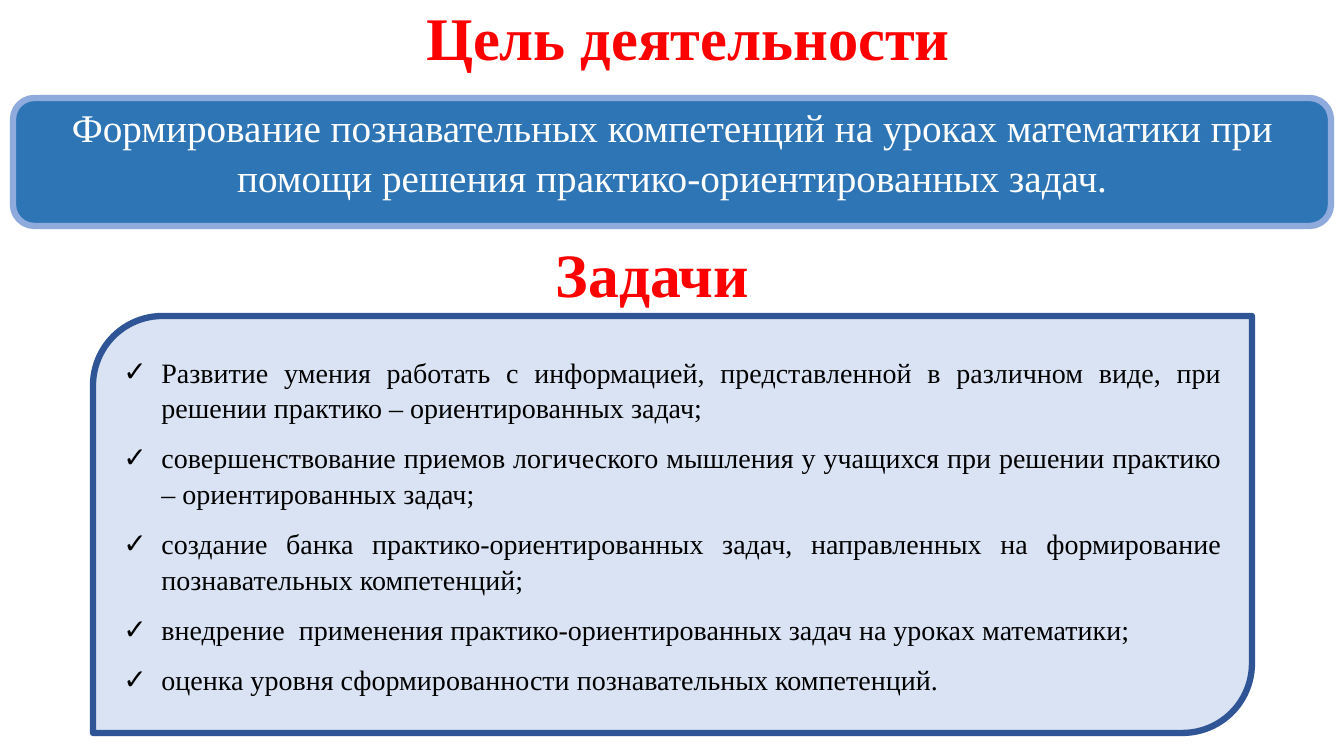
from lxml.etree import SubElement
from pptx import Presentation
from pptx.dml.color import RGBColor
from pptx.enum.shapes import MSO_SHAPE
from pptx.enum.text import MSO_ANCHOR, MSO_AUTO_SIZE, PP_ALIGN
from pptx.oxml.ns import qn
from pptx.util import Emu, Pt

PX = 9144000 / 1008  # 100.8 px to the inch

RED = RGBColor(0xFF, 0x00, 0x00)
WHITE = RGBColor(0xFF, 0xFF, 0xFF)
BLACK = RGBColor(0x00, 0x00, 0x00)
BLUE = RGBColor(0x2E, 0x75, 0xB6)
LIGHT_BLUE = RGBColor(0x8F, 0xAA, 0xDC)
PALE_BLUE = RGBColor(0xDA, 0xE3, 0xF3)
DARK_BLUE = RGBColor(0x2F, 0x55, 0x97)

FONT = "Times New Roman"
GOAL = ("Формирование познавательных компетенций на уроках математики "
        "при помощи решения практико-ориентированных задач.")
TASKS = [
    "Развитие умения работать с информацией, представленной в различном виде, "
    "при решении практико – ориентированных задач;",
    "совершенствование приемов логического мышления у учащихся при решении "
    "практико – ориентированных задач;",
    "создание банка практико-ориентированных задач, направленных на "
    "формирование познавательных компетенций;",
    "внедрение  применения практико-ориентированных задач на уроках математики;",
    "оценка уровня сформированности познавательных компетенций.",
]


def px(n):
    return Emu(round(n * PX))


def set_all(obj, values):
    for name, value in values.items():
        setattr(obj, name, value)


def place(s, left, top, width, height):
    set_all(s, {"left": px(left), "top": px(top),
                "width": px(width), "height": px(height)})


def paint(s, fill, line):
    s.fill.solid()
    s.fill.fore_color.rgb = fill
    s.line.color.rgb = line
    s.line.width = Pt(4.5)


def write(s, texts, font, color, paragraph, frame):
    """Fill the shape with one formatted paragraph for each text."""
    tf = s.text_frame
    set_all(tf, {"word_wrap": True, "auto_size": MSO_AUTO_SIZE.NONE, **frame})
    for i, text in enumerate(texts):
        p = tf.add_paragraph() if i else tf.paragraphs[0]
        set_all(p, paragraph)
        r = p.add_run()
        r.text = text
        set_all(r.font, {"name": FONT, **font})
        r.font.color.rgb = color


def add_check(p, indent):
    """Give the paragraph a tick bullet on a hanging indent."""
    pPr = p._p.get_or_add_pPr()
    pPr.set("marL", str(px(indent)))
    pPr.set("indent", str(-px(indent)))
    SubElement(pPr, qn("a:buChar")).set("char", "✓")


def set_geometry(s, preset):
    """Give a placeholder the outline of a preset shape."""
    geom = SubElement(s._element.spPr, qn("a:prstGeom"))
    geom.set("prst", preset)
    SubElement(geom, qn("a:avLst"))


def add_title(slide):
    s = slide.shapes.title
    place(s, 416, 0, 1159, 146)
    write(s, ["Цель деятельности"], {"size": Pt(43.2), "bold": True}, RED,
          {"alignment": PP_ALIGN.LEFT, "line_spacing": 0.9},
          {"vertical_anchor": MSO_ANCHOR.TOP, "margin_top": px(8)})


def add_goal(slide):
    s = slide.shapes.add_shape(MSO_SHAPE.ROUNDED_RECTANGLE,
                               px(13), px(98), px(1318), px(128))
    s.shadow.inherit = False
    paint(s, BLUE, LIGHT_BLUE)
    write(s, [GOAL], {"size": Pt(28)}, WHITE,
          {"alignment": PP_ALIGN.CENTER, "line_spacing": 1.07},
          {"vertical_anchor": MSO_ANCHOR.MIDDLE,
           "margin_top": px(0), "margin_bottom": px(24)})


def add_tasks_heading(slide):
    s = slide.shapes.add_textbox(px(541), px(226), px(223), px(90))
    write(s, ["Задачи"], {"size": Pt(44), "bold": True}, RED,
          {"alignment": PP_ALIGN.CENTER, "line_spacing": 1.07,
           "space_after": Pt(8)}, {})


def add_tasks(slide):
    s = slide.placeholders[1]
    place(s, 93, 316, 1159, 417)
    set_geometry(s, "round2DiagRect")
    paint(s, PALE_BLUE, DARK_BLUE)
    write(s, TASKS, {"size": Pt(20)}, BLACK,
          {"alignment": PP_ALIGN.JUSTIFY, "line_spacing": 1.07,
           "space_before": Pt(10), "space_after": Pt(0)},
          {"vertical_anchor": MSO_ANCHOR.MIDDLE})
    for p in s.text_frame.paragraphs:
        add_check(p, 38)
    s.text_frame.paragraphs[-1].space_after = Pt(8)


def main():
    prs = Presentation()
    set_all(prs, {"slide_width": px(1344), "slide_height": px(756)})
    slide = prs.slides.add_slide(prs.slide_layouts[1])
    add_title(slide)
    add_goal(slide)
    add_tasks_heading(slide)
    add_tasks(slide)
    prs.save("out.pptx")


if __name__ == "__main__":
    main()
